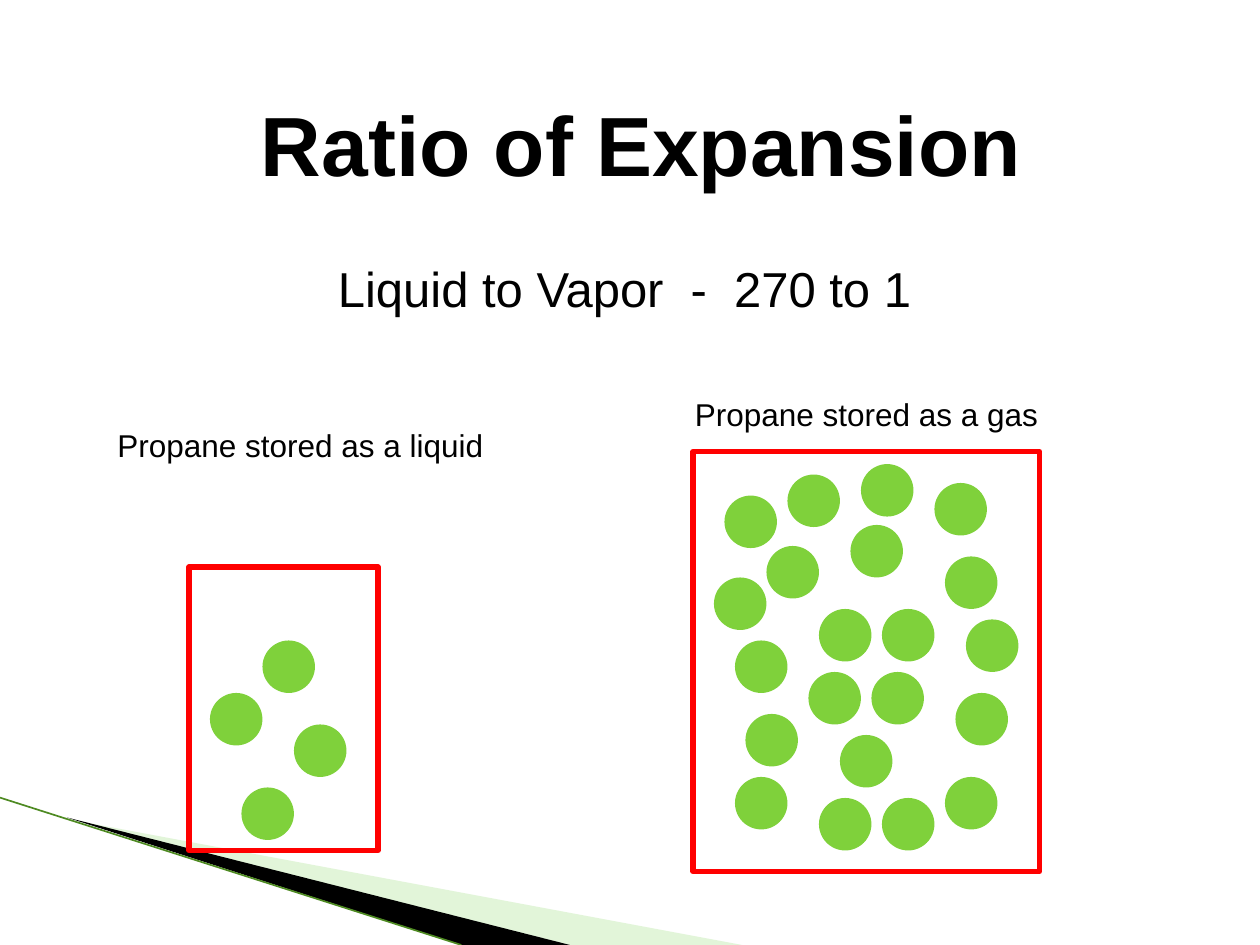
"""Build a slide comparing propane stored as a liquid and as a gas."""
from dataclasses import dataclass

from lxml import etree
from pptx import Presentation
from pptx.dml.color import RGBColor
from pptx.enum.shapes import MSO_CONNECTOR, MSO_SHAPE
from pptx.enum.text import MSO_ANCHOR, MSO_AUTO_SIZE, PP_ALIGN
from pptx.oxml.ns import qn
from pptx.util import Cm, Pt

ELLIPSE = MSO_SHAPE.OVAL
RECTANGLE = MSO_SHAPE.RECTANGLE
STRAIGHT = MSO_CONNECTOR.STRAIGHT
LEFT = PP_ALIGN.LEFT
TOP = MSO_ANCHOR.TOP
BOTTOM = MSO_ANCHOR.BOTTOM
NO_AUTOFIT = MSO_AUTO_SIZE.NONE

FONT = "Arial"
BLACK = "000000"
RED = "FF0000"
GREEN = "7FD13B"
PALE_GREEN = "B8E7A1"
DARK_GREEN = "4E8A22"
GRID_CM = 2.54 / 12
MOLECULE_SIZE = 5


@dataclass(frozen=True)
class Container:
    label: str
    label_box: tuple[float, float, float, float]
    frame: tuple[float, float, float, float]
    molecules: tuple[tuple[float, float], ...]


CONTAINERS = (
    Container(
        "Propane stored as a liquid", (10, 40, 38, 4.8), (18, 54, 18, 27),
        ((25, 61), (23, 75), (28, 69), (20, 66)),
    ),
    Container(
        "Propane stored as a gas", (65, 37, 39, 4.8), (66, 43, 33, 40),
        ((70, 61), (78, 58), (70, 74), (90, 74), (82, 44.2), (90, 53), (69, 47.2),
         (78, 76), (73, 52), (83, 64), (81, 50), (80, 70), (71, 68), (68, 55),
         (75, 45.2), (91, 66), (92, 59), (84, 76), (84, 58), (77, 64), (89, 46)),
    ),
)


def color(value: str) -> RGBColor:
    """Return the colour for a hex string."""
    return RGBColor.from_string(value)


def grid(*steps: float) -> list[int]:
    """Turn grid steps into lengths."""
    return [Cm(step * GRID_CM) for step in steps]


def write_text(shape, text: str, *, size: float, bold: bool = False,
               anchor=TOP, indent: float = 0) -> None:
    """Write one formatted paragraph into a shape."""
    frame = shape.text_frame
    frame.word_wrap = True
    frame.auto_size = NO_AUTOFIT
    frame.vertical_anchor = anchor
    frame.margin_left = Cm(0.25 + indent)
    frame.margin_right = Cm(0.25)
    frame.margin_top = frame.margin_bottom = Cm(0.13)
    paragraph = frame.paragraphs[0]
    paragraph.text = text
    paragraph.alignment = LEFT
    paragraph.line_spacing = 1.0
    paragraph.space_before = Pt(0)
    font = paragraph.font
    font.name, font.size, font.bold = FONT, Pt(size), bold
    font.color.rgb = color(BLACK)


def add_text(slide, text: str, box: list[int], *, size: float) -> None:
    """Add a text box."""
    write_text(slide.shapes.add_textbox(*box), text, size=size)


def add_wedge(slide, points: list[tuple[float, float]], fill: str,
              opacity: int = 100) -> None:
    """Add a filled triangle of the corner decoration."""
    start, *others = [(Cm(x), Cm(y)) for x, y in points]
    builder = slide.shapes.build_freeform(*start)
    builder.add_line_segments(others, close=True)
    shape = builder.convert_to_shape()
    shape.shadow.inherit = False
    shape.line.fill.background()
    shape.fill.solid()
    shape.fill.fore_color.rgb = color(fill)
    if opacity < 100:
        value = shape.fill._xPr.find(f".//{qn('a:srgbClr')}")
        etree.SubElement(value, qn("a:alpha"), val=str(opacity * 1000))


def add_decoration(slide) -> None:
    """Add the wedges and the edge line in the lower left corner."""
    add_wedge(slide, [(1.4, 16.52), (14.96, 19.05), (11.49, 19.05)], PALE_GREEN, 40)
    add_wedge(slide, [(1.35, 16.48), (11.49, 19.05), (9.3, 19.05)], BLACK)
    edge = slide.shapes.add_connector(STRAIGHT, Cm(0), Cm(16.08), Cm(9.3), Cm(19.05))
    edge.line.color.rgb = color(DARK_GREEN)
    edge.line.width = Pt(0.95)
    etree.SubElement(edge._element.spPr, qn("a:effectLst"))


def add_container(slide, container: Container) -> None:
    """Add a labelled frame with its molecules."""
    frame = slide.shapes.add_shape(RECTANGLE, *grid(*container.frame))
    frame.shadow.inherit = False
    frame.fill.background()
    frame.line.color.rgb = color(RED)
    frame.line.width = Pt(3)
    for left, top in container.molecules:
        box = grid(left, top, MOLECULE_SIZE, MOLECULE_SIZE)
        molecule = slide.shapes.add_shape(ELLIPSE, *box)
        molecule.shadow.inherit = False
        molecule.fill.solid()
        molecule.fill.fore_color.rgb = color(GREEN)
        molecule.line.fill.background()
    add_text(slide, container.label, grid(*container.label_box), size=18)


def main() -> None:
    """Create and save the presentation."""
    presentation = Presentation()
    presentation.slide_width, presentation.slide_height = Cm(25.4), Cm(19.05)
    slide = presentation.slides.add_slide(presentation.slide_layouts[5])
    add_decoration(slide)
    title = slide.shapes.title
    title.left, title.top, title.width, title.height = grid(17, 8, 86, 11)
    write_text(title, "Ratio of Expansion", size=48, bold=True,
               anchor=BOTTOM, indent=1.41)
    add_text(slide, "Liquid to Vapor  -  270 to 1", grid(31, 24, 70, 21.4), size=28)
    for container in CONTAINERS:
        add_container(slide, container)
    presentation.save("out.pptx")


if __name__ == "__main__":
    main()
